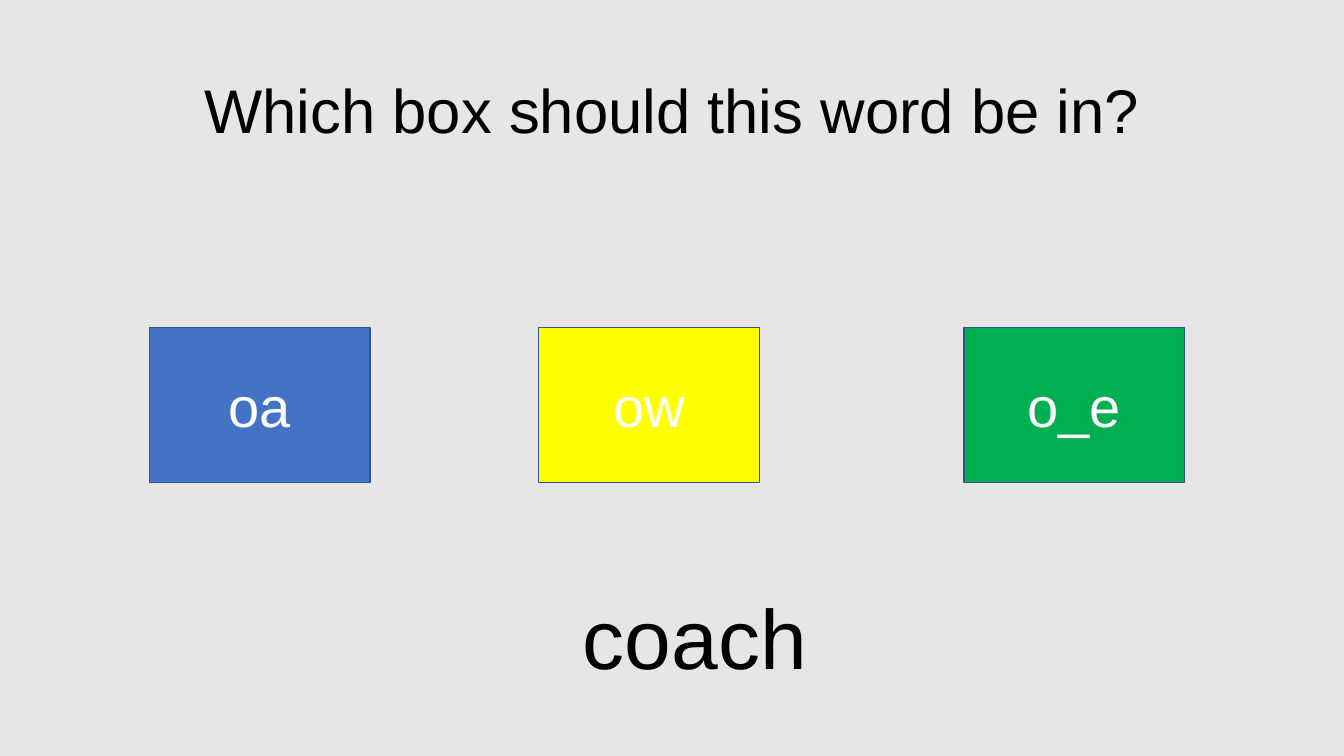
from dataclasses import dataclass

from pptx import Presentation
from pptx.dml.color import RGBColor
from pptx.enum.shapes import MSO_SHAPE
from pptx.enum.text import MSO_ANCHOR, MSO_AUTO_SIZE, PP_ALIGN
from pptx.slide import Slide
from pptx.text.text import TextFrame
from pptx.util import Inches, Pt

SLIDE_WIDTH = Inches(13.33)
SLIDE_HEIGHT = Inches(7.5)
BOX_TOP = Inches(3.25)
BOX_WIDTH = Inches(2.19)
BOX_HEIGHT = Inches(1.54)
FONT_NAME = "Arial"

BACKGROUND = RGBColor(0xE7, 0xE6, 0xE6)
BLACK = RGBColor(0x00, 0x00, 0x00)
WHITE = RGBColor(0xFF, 0xFF, 0xFF)
BLUE = RGBColor(0x44, 0x72, 0xC4)
YELLOW = RGBColor(0xFF, 0xFF, 0x00)
GREEN = RGBColor(0x00, 0xB0, 0x50)
OUTLINE = RGBColor(0x32, 0x54, 0x91)


@dataclass(frozen=True)
class SpellingBox:
    spelling: str
    left: float
    fill: RGBColor


SPELLING_BOXES = (
    SpellingBox("oa", 1.48, BLUE),
    SpellingBox("ow", 5.34, YELLOW),
    SpellingBox("o_e", 9.56, GREEN),
)


def write_text(
    frame: TextFrame,
    text: str,
    size: int,
    color: RGBColor,
    alignment: PP_ALIGN = PP_ALIGN.CENTER,
    anchor: MSO_ANCHOR = MSO_ANCHOR.MIDDLE,
) -> None:
    frame.text = text
    frame.word_wrap = True
    frame.vertical_anchor = anchor
    paragraph = frame.paragraphs[0]
    paragraph.alignment = alignment
    paragraph.font.name = FONT_NAME
    paragraph.font.size = Pt(size)
    paragraph.font.color.rgb = color


def add_title(slide: Slide) -> None:
    title = slide.shapes.title
    title.left, title.top = Inches(0.92), Inches(0.4)
    title.width, title.height = Inches(11.5), Inches(1.45)
    write_text(title.text_frame, "Which box should this word be in?", 44, BLACK)
    title.text_frame.paragraphs[0].line_spacing = 0.9


def add_spelling_box(slide: Slide, box: SpellingBox) -> None:
    shape = slide.shapes.add_shape(
        MSO_SHAPE.RECTANGLE, Inches(box.left), BOX_TOP, BOX_WIDTH, BOX_HEIGHT
    )
    shape.shadow.inherit = False
    shape.fill.solid()
    shape.fill.fore_color.rgb = box.fill
    shape.line.color.rgb = OUTLINE
    shape.line.width = Pt(1)
    write_text(shape.text_frame, box.spelling, 40, WHITE)


def add_word(slide: Slide) -> None:
    shape = slide.shapes.add_textbox(
        Inches(5.68), Inches(5.76), Inches(2.83), Inches(1.11)
    )
    write_text(shape.text_frame, "coach", 60, BLACK, PP_ALIGN.LEFT, MSO_ANCHOR.TOP)
    shape.text_frame.auto_size = MSO_AUTO_SIZE.SHAPE_TO_FIT_TEXT


def main() -> None:
    """Build the spelling-choice slide and save it."""
    presentation = Presentation()
    presentation.slide_width = SLIDE_WIDTH
    presentation.slide_height = SLIDE_HEIGHT
    slide = presentation.slides.add_slide(presentation.slide_layouts.get_by_name("Title Only"))
    slide.background.fill.solid()
    slide.background.fill.fore_color.rgb = BACKGROUND
    add_title(slide)
    for box in SPELLING_BOXES:
        add_spelling_box(slide, box)
    add_word(slide)
    presentation.save("out.pptx")


if __name__ == "__main__":
    main()
